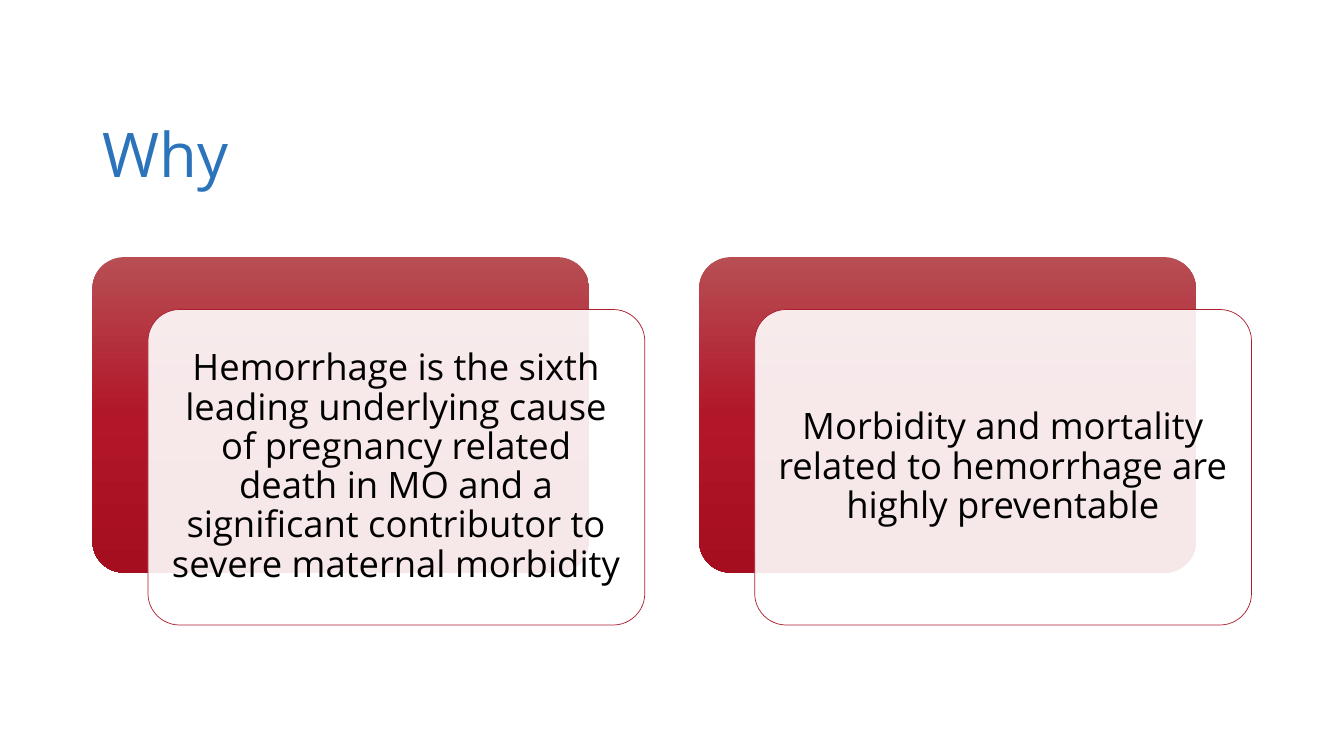
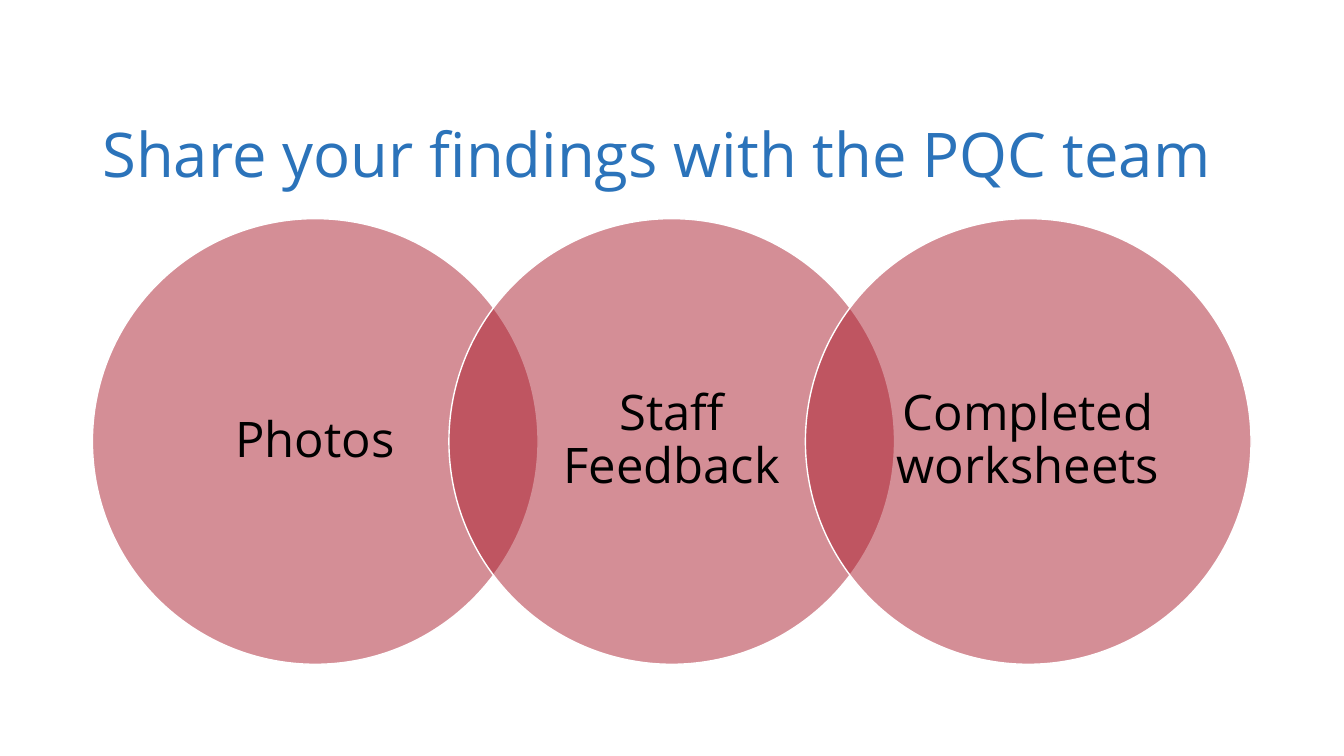
"""Build two slides: the reasons for the work and what to share with the team."""
from copy import deepcopy

from lxml import etree
from pptx import Presentation
from pptx.dml.color import RGBColor
from pptx.enum.shapes import MSO_SHAPE
from pptx.enum.text import MSO_ANCHOR, PP_ALIGN
from pptx.oxml.ns import qn
from pptx.util import Cm, Pt

ROUNDED, OVAL = MSO_SHAPE.ROUNDED_RECTANGLE, MSO_SHAPE.OVAL
MIDDLE, LEFT, CENTER = MSO_ANCHOR.MIDDLE, PP_ALIGN.LEFT, PP_ALIGN.CENTER

THEME = {
    "font": "Open Sans",
    "title": RGBColor(0x2B, 0x73, 0xBA),
    "text": RGBColor(0, 0, 0),
    "white": RGBColor(0xFF, 0xFF, 0xFF),
    "red": RGBColor(0xAB, 0x1E, 0x2E),
    "gradient": [(0, RGBColor(0xB7, 0x4E, 0x54)),
                 (0.5, RGBColor(0xB2, 0x17, 0x29)),
                 (1, RGBColor(0xA4, 0x0E, 0x1F))],
    "title_size": Pt(44),
    "card_size": Pt(26),
    "circle_size": Pt(35),
}
MARGIN = 2.33


def write(box, text, size, color, align, inset_x=0.25, inset_y=0.13):
    frame = box.text_frame
    frame_format = {
        "word_wrap": True, "vertical_anchor": MIDDLE,
        "margin_left": Cm(inset_x), "margin_right": Cm(inset_x),
        "margin_top": Cm(inset_y), "margin_bottom": Cm(inset_y),
    }
    for name, value in frame_format.items():
        setattr(frame, name, value)
    para = frame.paragraphs[0]
    para.alignment = align
    para.line_spacing = 0.9
    span = para.add_run()
    span.text = text
    for name, value in {"name": THEME["font"], "size": size}.items():
        setattr(span.font, name, value)
    span.font.color.rgb = color


def add_panel(page, kind, place, fill, opacity, line, line_width):
    panel = page.shapes.add_shape(kind, *map(Cm, place))
    panel.shadow.inherit = False
    panel.fill.solid()
    panel.fill.fore_color.rgb = fill
    color = panel.fill._xPr.find(qn("a:solidFill"))[0]
    etree.SubElement(color, qn("a:alpha")).set("val", str(opacity * 1000))
    panel.line.color.rgb = line
    panel.line.width = Pt(line_width)
    return panel


deck = Presentation()
deck.slide_width, deck.slide_height = Cm(33.87), Cm(19.05)

pages = []
for title in ["Why", "Share your findings with the PQC team"]:
    page = deck.slides.add_slide(deck.slide_layouts[6])
    title_box = page.shapes.add_textbox(Cm(MARGIN), Cm(2.87), Cm(29.21), Cm(2.18))
    write(title_box, title, THEME["title_size"], THEME["title"], LEFT)
    pages.append(page)
why_page, share_page = pages

CARD_WIDTH, CARD_HEIGHT, CARD_TOP, CARD_STEP = 12.52, 7.95, 6.48, 15.29
SHIFT_X, SHIFT_Y = 1.4, 1.32
reasons = [
    "Hemorrhage is the sixth leading underlying cause of pregnancy related "
    "death in MO and a significant contributor to severe maternal morbidity",
    "Morbidity and mortality related to hemorrhage are highly preventable",
]
for index, reason in enumerate(reasons):
    left = MARGIN + index * CARD_STEP
    backing = why_page.shapes.add_shape(
        ROUNDED, Cm(left), Cm(CARD_TOP), Cm(CARD_WIDTH), Cm(CARD_HEIGHT))
    backing.shadow.inherit = False
    backing.line.fill.background()
    backing.fill.gradient()
    backing.fill.gradient_angle = 270
    stop_list = backing.fill._xPr.find(qn("a:gradFill")).find(qn("a:gsLst"))
    stop_list.append(deepcopy(stop_list[0]))
    for stop, (position, color) in zip(backing.fill.gradient_stops, THEME["gradient"]):
        stop.position = position
        stop.color.rgb = color
    place = (left + SHIFT_X, CARD_TOP + SHIFT_Y, CARD_WIDTH, CARD_HEIGHT)
    card = add_panel(why_page, ROUNDED, place, THEME["white"], 90, THEME["red"], 0.5)
    for shape in (backing, card):
        shape.adjustments[0] = 0.1
    write(card, reason, THEME["card_size"], THEME["text"], CENTER, 0.28, 0.28)

DIAMETER, CIRCLE_TOP = 11.23, 5.51
CIRCLE_STEP = DIAMETER * 0.8
for index, label in enumerate(["Photos", "Staff Feedback", "Completed worksheets"]):
    place = (MARGIN + index * CIRCLE_STEP, CIRCLE_TOP, DIAMETER, DIAMETER)
    circle = add_panel(share_page, OVAL, place, THEME["red"], 50, THEME["white"], 1)
    write(circle, label, THEME["circle_size"], THEME["text"], CENTER, 0.61)

deck.save("out.pptx")
